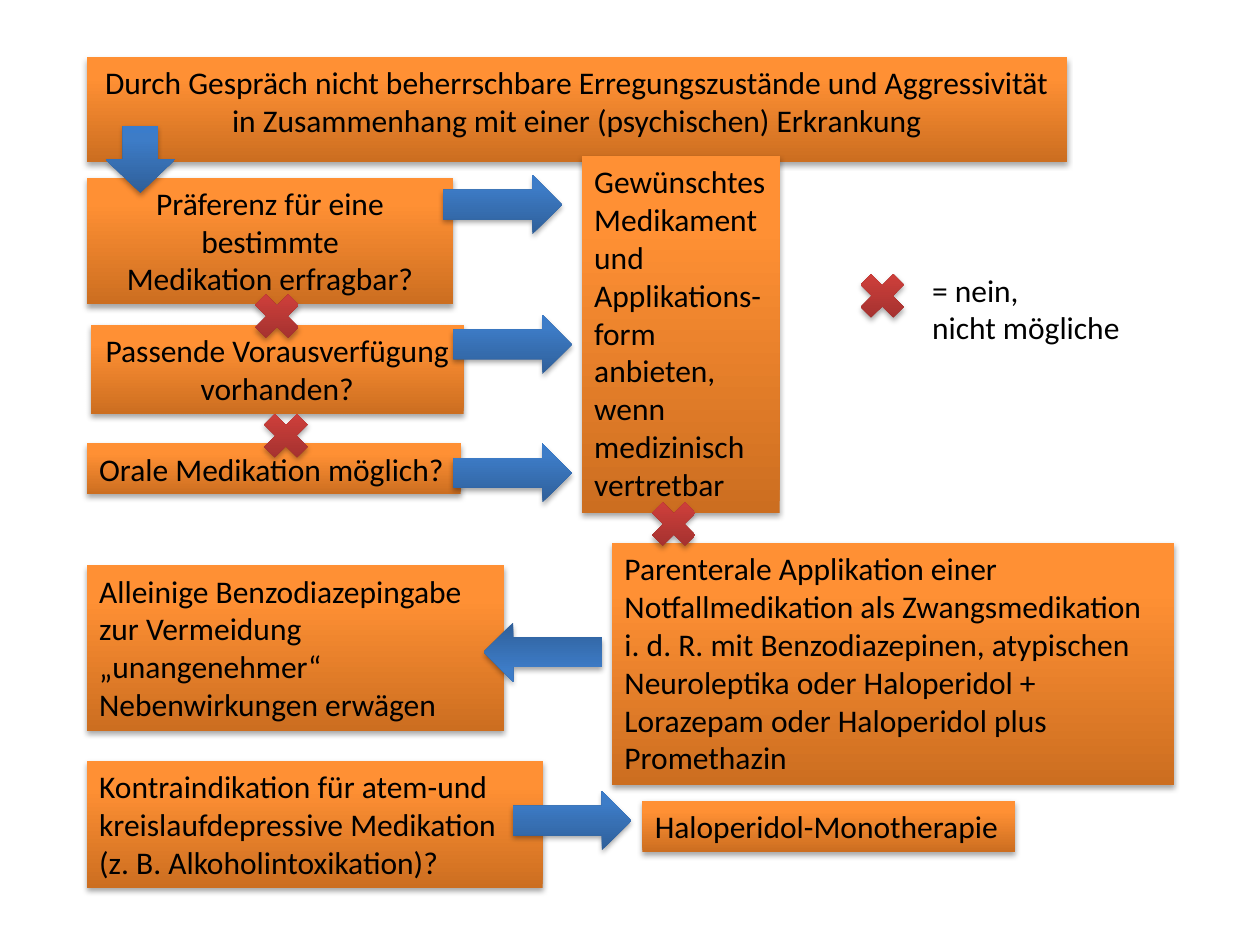
"""Build a one-slide flow chart on emergency medication for states of agitation."""
from lxml.etree import SubElement
from pptx import Presentation
from pptx.dml.color import RGBColor
from pptx.enum.shapes import MSO_SHAPE
from pptx.enum.text import MSO_ANCHOR, MSO_AUTO_SIZE, PP_ALIGN
from pptx.oxml.ns import qn
from pptx.util import Cm, Pt

ORANGE = ("CC6E20", "FF9034", "FF9136")
RED = ("9C2F2D", "CB3E3A", "CE3B37")
BLUE = ("2F5F99", "3D7CC7", "3A7CCB")


def style(sp, colors):
    """Give a shape a three-stop upward gradient, no outline and a soft shadow."""
    sp.fill.gradient()
    sp.fill.gradient_angle = 90
    stops = sp._element.spPr.find(qn("a:gradFill")).find(qn("a:gsLst"))
    stops.clear()
    for pos, color in zip((0, 80000, 100000), colors):
        gs = SubElement(stops, qn("a:gs"), pos=str(pos))
        SubElement(gs, qn("a:srgbClr"), val=color)
    sp.line.fill.background()
    sp.shadow.inherit = False
    effects = sp._element.spPr.find(qn("a:effectLst"))
    shadow = SubElement(effects, qn("a:outerShdw"), blurRad="40000",
                        dist="23000", dir="5400000", rotWithShape="0")
    black = SubElement(shadow, qn("a:srgbClr"), val="000000")
    SubElement(black, qn("a:alpha"), val="35000")


def write(sp, lines, align, wrap):
    """Write one paragraph per line in black 18 pt Calibri."""
    tf = sp.text_frame
    tf.word_wrap = wrap
    tf.auto_size = MSO_AUTO_SIZE.SHAPE_TO_FIT_TEXT
    tf.vertical_anchor = MSO_ANCHOR.TOP
    for i, line in enumerate(lines):
        p = tf.add_paragraph() if i else tf.paragraphs[0]
        p.alignment = align
        r = p.add_run()
        r.text = line
        r.font.name = "Calibri"
        r.font.size = Pt(18)
        r.font.color.rgb = RGBColor.from_string("000000")


prs = Presentation()
prs.slide_width, prs.slide_height = Cm(25.4), Cm(19.05)
s = prs.slides.add_slide(prs.slide_layouts[5])

title = s.shapes.title
title.left, title.top, title.width, title.height = Cm(1.75), Cm(1.14), Cm(19.76), Cm(1.8)
style(title, ORANGE)
write(title, ["Durch Gespräch nicht beherrschbare Erregungszustände und Aggressivität",
              "in Zusammenhang mit einer (psychischen) Erkrankung"], PP_ALIGN.CENTER, False)

boxes = [
    (1.75, 3.58, 7.39, 2.56, PP_ALIGN.CENTER, True,
     ["Präferenz für eine bestimmte", "Medikation erfragbar?"]),
    (1.83, 6.55, 7.52, 1.8, PP_ALIGN.CENTER, False,
     ["Passende Vorausverfügung", "vorhanden?"]),
    (11.73, 3.15, 3.99, 7.19, PP_ALIGN.LEFT, True,
     ["Gewünschtes Medikament und Applikations- form", "anbieten, wenn",
      "medizinisch vertretbar"]),
    (1.75, 8.94, 7.54, 1.02, PP_ALIGN.LEFT, False, ["Orale Medikation möglich?"]),
    (12.34, 10.95, 11.33, 4.88, PP_ALIGN.LEFT, True,
     ["Parenterale Applikation einer Notfallmedikation als Zwangsmedikation "
      "i. d. R. mit Benzodiazepinen, atypischen Neuroleptika oder Haloperidol + "
      "Lorazepam oder Haloperidol plus Promethazin"]),
    (12.95, 16.15, 7.52, 1.02, PP_ALIGN.LEFT, False, ["Haloperidol-Monotherapie"]),
    (1.75, 11.4, 8.41, 3.33, PP_ALIGN.LEFT, True,
     ["Alleinige Benzodiazepingabe zur Vermeidung „unangenehmer“ Nebenwirkungen erwägen"]),
    (1.75, 15.34, 9.19, 2.56, PP_ALIGN.LEFT, True,
     ["Kontraindikation für atem-und kreislaufdepressive Medikation",
      "(z. B. Alkoholintoxikation)?"]),
]
for x, y, w, h, align, wrap, lines in boxes:
    sp = s.shapes.add_shape(MSO_SHAPE.RECTANGLE, Cm(x), Cm(y), Cm(w), Cm(h))
    style(sp, ORANGE)
    write(sp, lines, align, wrap)

for x, y in [(5.13, 8.15), (4.95, 5.74), (12.95, 9.93), (17.15, 5.33)]:
    sp = s.shapes.add_shape(MSO_SHAPE.MATH_MULTIPLY, Cm(x), Cm(y), Cm(1.27), Cm(1.27))
    style(sp, RED)

arrows = [(9.14, 8.94, 0), (9.14, 6.35, 0), (8.94, 3.53, 0), (9.75, 12.55, 180), (10.34, 15.95, 0)]
for x, y, angle in arrows:
    sp = s.shapes.add_shape(MSO_SHAPE.RIGHT_ARROW, Cm(x), Cm(y), Cm(2.39), Cm(1.19))
    sp.rotation = angle
    style(sp, BLUE)

sp = s.shapes.add_shape(MSO_SHAPE.DOWN_ARROW, Cm(2.13), Cm(2.54), Cm(1.4), Cm(1.35))
style(sp, BLUE)

legend = s.shapes.add_textbox(Cm(18.54), Cm(5.33), Cm(4.34), Cm(1.8))
write(legend, ["= nein,", "nicht mögliche"], PP_ALIGN.LEFT, False)

prs.save("out.pptx")
